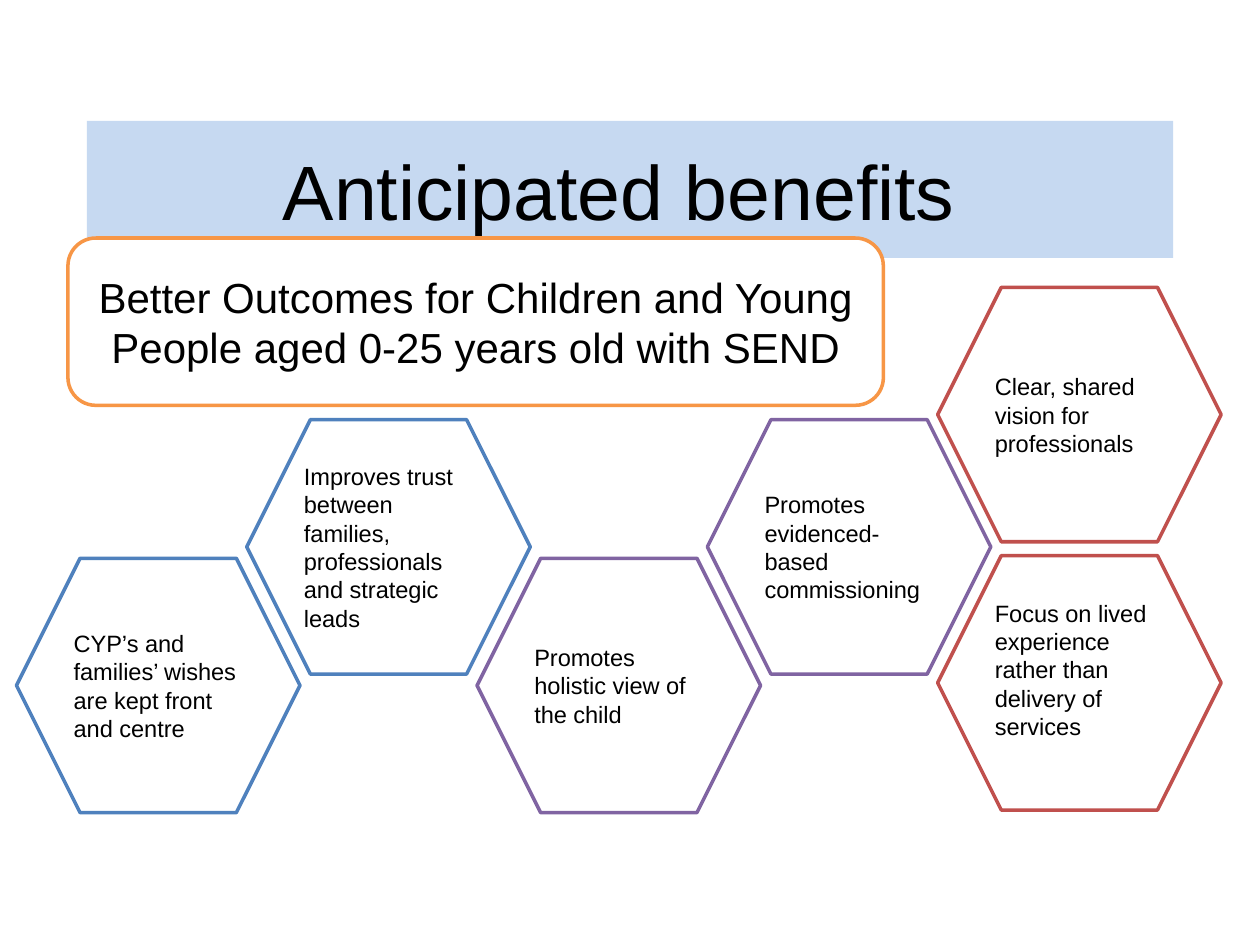
from pptx import Presentation
from pptx import util as u
from pptx.dml.color import RGBColor
from pptx.enum import shapes, text

BLACK = RGBColor(0x00, 0x00, 0x00)
WHITE = RGBColor(0xFF, 0xFF, 0xFF)
PALE_BLUE = RGBColor(0xC6, 0xD9, 0xF1)
BLUE = RGBColor(0x4F, 0x81, 0xBD)
PURPLE = RGBColor(0x80, 0x64, 0xA2)
RED = RGBColor(0xC0, 0x50, 0x4D)
ORANGE = RGBColor(0xF7, 0x96, 0x46)

FIRST_LEFT, COLUMN_STEP = 9.4, 131.6
LOW, MIDDLE, TOP, BOTTOM = 319, 239.8, 164.2, 317.5
BENEFITS = [
    (0, LOW, BLUE, "CYP’s and families’ wishes are kept front and centre", 3.6),
    (1, MIDDLE, BLUE, "Improves trust between families, professionals and strategic leads", 3.6),
    (2, LOW, PURPLE, "Promotes holistic view of the child", 3.6),
    (4, TOP, RED, "Clear, shared vision for professionals", 3.6),
    (4, BOTTOM, RED, "Focus on lived experience rather than delivery of services", 19),
    (3, MIDDLE, PURPLE, "Promotes evidenced-based commissioning", 3.6),
]


class BenefitsSlide:
    font = "Arial"
    line_width = 2

    def __init__(self, page):
        self.page = page

    def box(self, kind, bounds, words, size, align, fill=WHITE, line=None):
        box = self.page.shapes.add_shape(kind, *(u.Pt(value) for value in bounds))
        box.shadow.inherit = False
        box.fill.solid()
        box.fill.fore_color.rgb = fill
        if line is None:
            box.line.fill.background()
        else:
            box.line.color.rgb = line
            box.line.width = u.Pt(self.line_width)
        frame = box.text_frame
        frame.text = words
        frame.word_wrap = True
        frame.vertical_anchor = text.MSO_ANCHOR.MIDDLE
        para = frame.paragraphs[0]
        para.alignment = align
        span = para.runs[0]
        span.font.name = self.font
        span.font.size = u.Pt(size)
        span.font.color.rgb = BLACK
        return box

    def title(self, words):
        self.box(shapes.MSO_SHAPE.RECTANGLE, (49.6, 69.1, 620.8, 78.3), words, 44,
                 text.PP_ALIGN.CENTER, fill=PALE_BLUE)

    def benefit(self, column, top, colour, words, bottom_margin):
        left = FIRST_LEFT + column * COLUMN_STEP
        box = self.box(shapes.MSO_SHAPE.HEXAGON, (left, top, 162, 145.4), words, 13.5,
                       text.PP_ALIGN.LEFT, line=colour)
        box.text_frame.margin_bottom = u.Pt(bottom_margin)

    def outcome(self, words):
        self.box(shapes.MSO_SHAPE.ROUNDED_RECTANGLE, (38.8, 136, 466, 95.6), words, 24,
                 text.PP_ALIGN.CENTER, line=ORANGE)


def main():
    deck = Presentation()
    deck.slide_width, deck.slide_height = u.Pt(720), u.Pt(540)
    slide = BenefitsSlide(deck.slides.add_slide(deck.slide_layouts[6]))
    slide.title("Anticipated benefits ")
    for benefit in BENEFITS:
        slide.benefit(*benefit)
    slide.outcome("Better Outcomes for Children and Young People aged 0-25 years old with SEND")
    deck.save("out.pptx")


if __name__ == "__main__":
    main()
